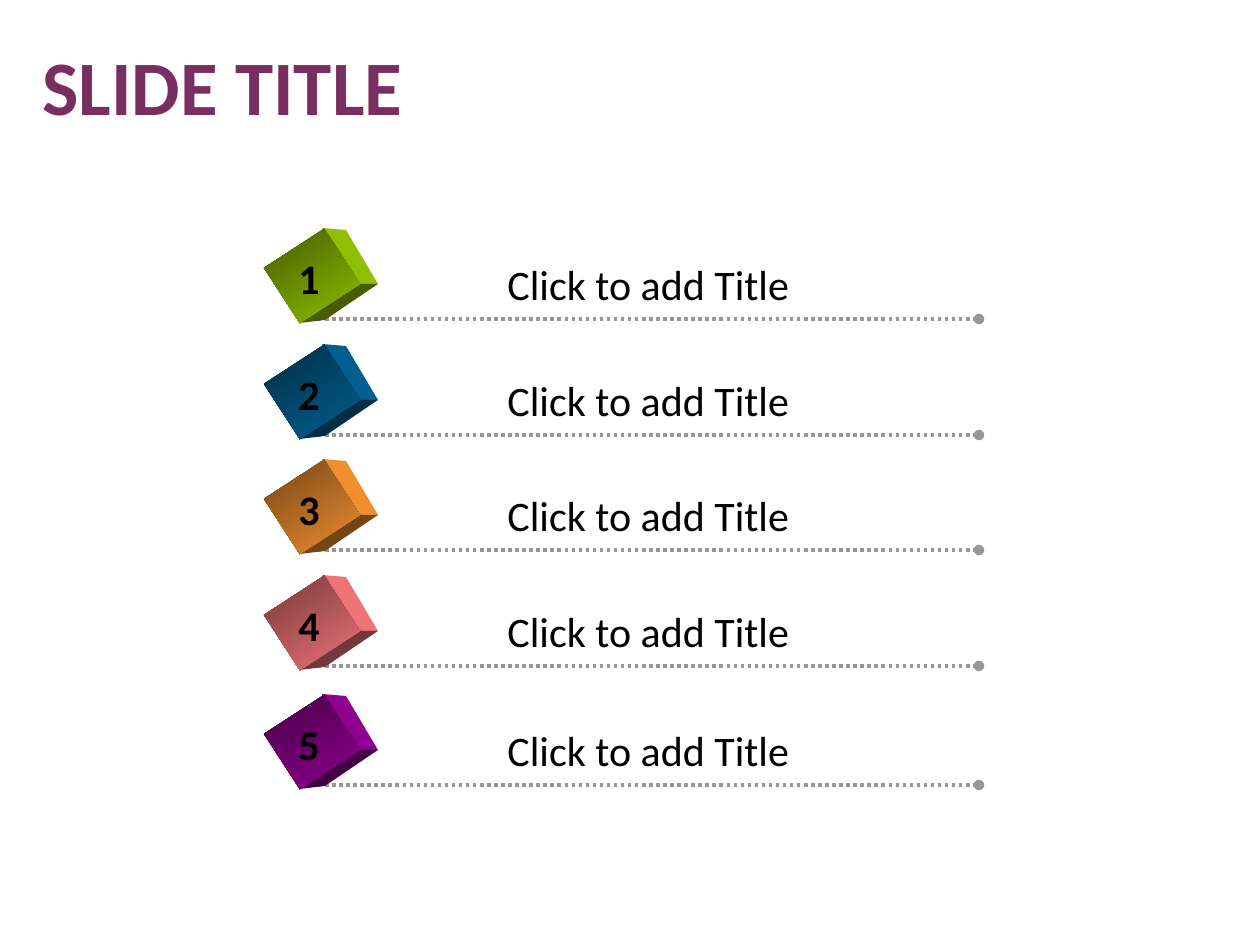
import pptx
import pptx.util
import pptx.dml.color
import pptx.enum.dml
import pptx.enum.shapes
import pptx.enum.text
import pptx.oxml
import pptx.oxml.ns

RGBColor = pptx.dml.color.RGBColor
SCALE = 914400 / 126
PLUM = RGBColor(0x79, 0x2E, 0x61)
BLACK = RGBColor(0x00, 0x00, 0x00)
GRAY = RGBColor(0x96, 0x96, 0x96)

ROWS = [
    (0, RGBColor(0x8F, 0xBF, 0x00), RGBColor(0x45, 0x5C, 0x00)),
    (116, RGBColor(0x00, 0x5F, 0x8F), RGBColor(0x00, 0x2E, 0x45)),
    (231, RGBColor(0xEF, 0x8F, 0x30), RGBColor(0x73, 0x45, 0x17)),
    (347, RGBColor(0xEF, 0x74, 0x78), RGBColor(0x73, 0x38, 0x3A)),
    (466, RGBColor(0x8F, 0x00, 0x8F), RGBColor(0x45, 0x00, 0x45)),
]
RIGHT_FACE = [(322, 228), (346, 230), (378, 284), (356, 284)]
BOTTOM_FACE = [(300, 323), (356, 284), (378, 284), (325, 320)]


def px(*lengths):
    return [pptx.util.Emu(round(length * SCALE)) for length in lengths]


def add_run(paragraph, text, size, color, bold):
    run = paragraph.add_run()
    run.text = text
    run.font.name = "Calibri"
    run.font.size = pptx.util.Pt(size)
    run.font.bold = bold
    run.font.color.rgb = color


presentation = pptx.Presentation()
presentation.slide_width, presentation.slide_height = px(1260, 945)
slide = presentation.slides.add_slide(presentation.slide_layouts[5])

title = slide.shapes.title
title.left, title.top, title.width, title.height = px(30, 29, 1200, 123)
title.text_frame.vertical_anchor = pptx.enum.text.MSO_ANCHOR.MIDDLE
paragraph = title.text_frame.paragraphs[0]
paragraph.alignment = pptx.enum.text.PP_ALIGN.LEFT
paragraph.line_spacing = 0.9
add_run(paragraph, "SLIDE TITLE", 44, PLUM, True)

for number, (offset, light, dark) in enumerate(ROWS, 1):
    group = slide.shapes.add_group_shape()

    connector = group.shapes.add_connector(
        pptx.enum.shapes.MSO_CONNECTOR.STRAIGHT, *px(318, 319 + offset, 979, 319 + offset))
    connector.line.color.rgb = GRAY
    connector.line.width = pptx.util.Pt(2)
    connector.line.dash_style = pptx.enum.dml.MSO_LINE.ROUND_DOT
    tail = pptx.oxml.parse_xml('<a:tailEnd %s type="oval"/>' % pptx.oxml.ns.nsdecls("a"))
    connector.line._get_or_add_ln().append(tail)
    effects = pptx.oxml.parse_xml("<a:effectLst %s/>" % pptx.oxml.ns.nsdecls("a"))
    connector._element.spPr.append(effects)

    for points, color in [(RIGHT_FACE, light), (BOTTOM_FACE, dark)]:
        corners = [(x, y + offset) for x, y in points]
        builder = group.shapes.build_freeform(*corners[0], scale=SCALE)
        builder.add_line_segments(corners[1:], close=True)
        face = builder.convert_to_shape()
        face.shadow.inherit = False
        face.fill.solid()
        face.fill.fore_color.rgb = color
        face.line.fill.background()

    front = group.shapes.add_shape(
        pptx.enum.shapes.MSO_SHAPE.RECTANGLE, *px(279, 240 + offset, 66, 72))
    front.rotation = 57
    front.shadow.inherit = False
    front.line.fill.background()
    front.fill.gradient()
    front.fill.gradient_angle = 0
    for stop, position, color in zip(front.fill.gradient_stops, (0, 1), (dark, light)):
        stop.position = position
        stop.color.rgb = color

    for text, left, top, width, bold in [
        ("Click to add Title", 495, 252, 310, False),
        (str(number), 286, 246, 47, True),
    ]:
        box = group.shapes.add_textbox(*px(left, top + offset, width, 64))
        box.text_frame.word_wrap = False
        box.text_frame.auto_size = pptx.enum.text.MSO_AUTO_SIZE.SHAPE_TO_FIT_TEXT
        add_run(box.text_frame.paragraphs[0], text, 24, BLACK, bold)

presentation.save("out.pptx")
